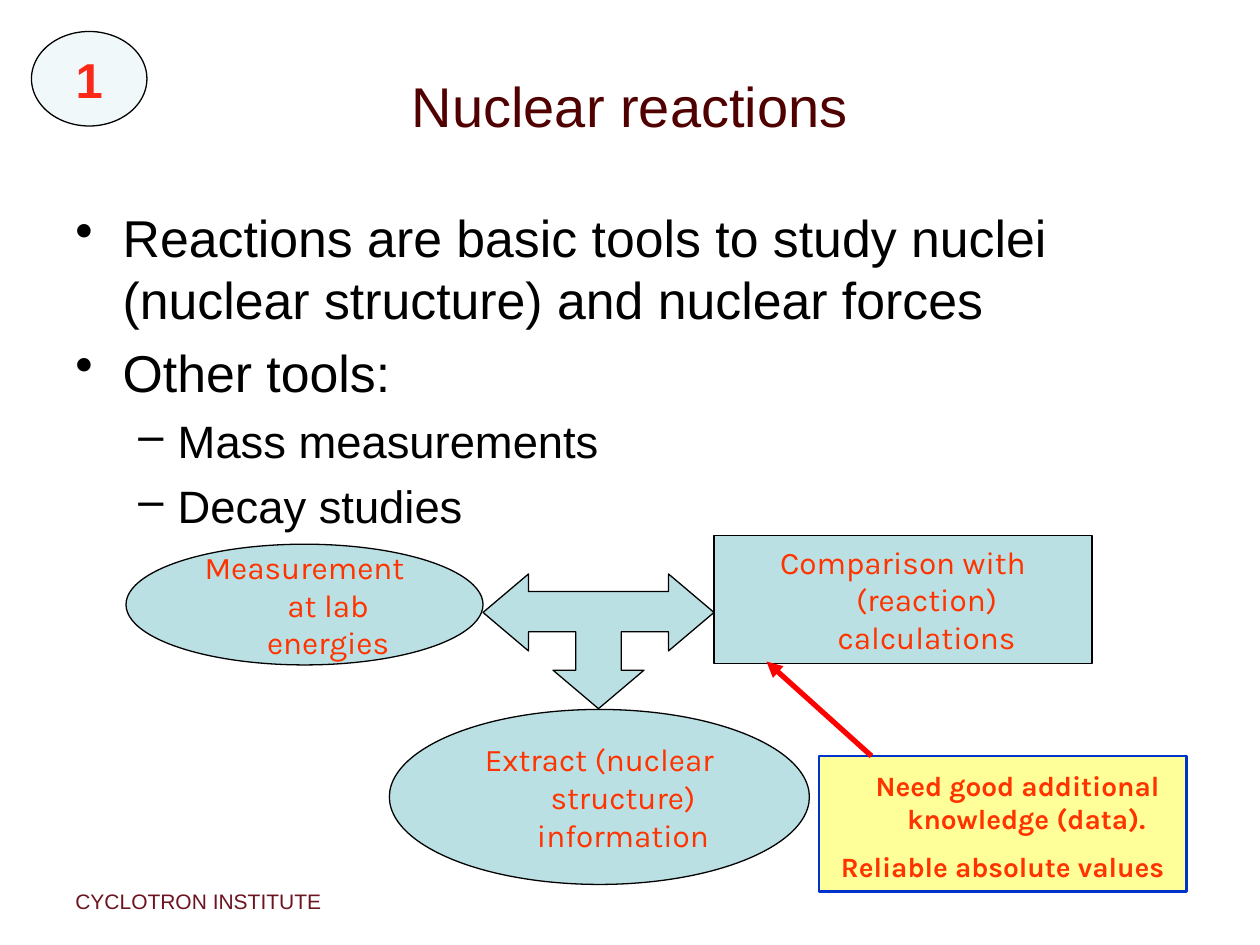
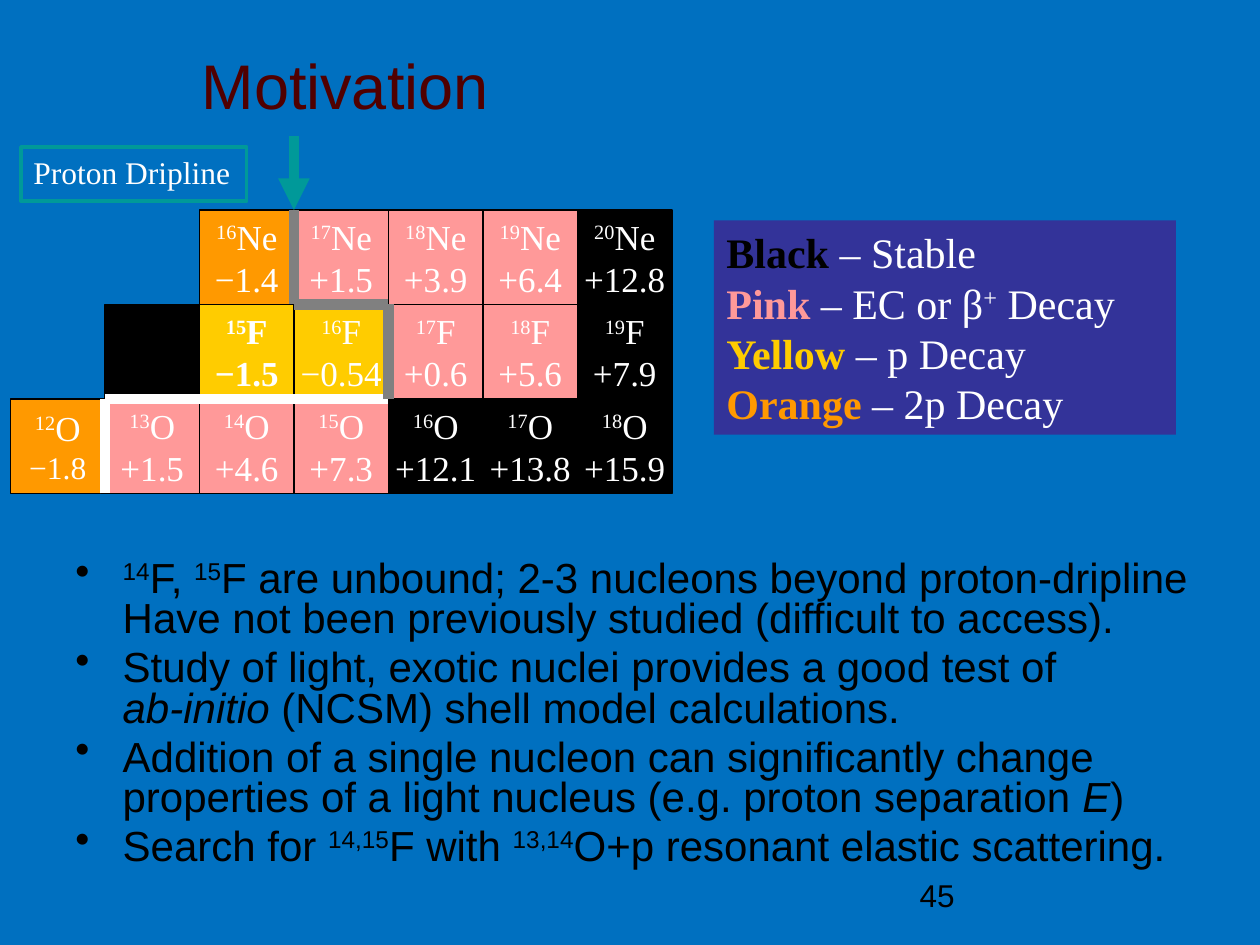
"""Builds two slides on nuclear reactions and the proton dripline."""
from dataclasses import dataclass

from lxml.etree import SubElement
from pptx import Presentation
from pptx.dml.color import RGBColor
from pptx.enum.shapes import MSO_CONNECTOR, MSO_SHAPE
from pptx.enum.text import MSO_ANCHOR, PP_ALIGN
from pptx.oxml.ns import qn
from pptx.util import Pt


@dataclass(frozen=True)
class Theme:
    sans: str = "Arial"
    serif: str = "Times New Roman"
    diagram: str = "Karla"
    black: str = "000000"
    white: str = "FFFFFF"
    title: str = "500000"
    footer: str = "6C1420"
    node: str = "BBE0E3"
    node_text: str = "FF3300"
    note: str = "FFFF99"
    note_line: str = "0033CC"
    red: str = "FF0000"
    badge: str = "F0F8F9"
    badge_text: str = "FC2818"
    blue: str = "0070C0"
    legend: str = "333399"
    teal: str = "009999"
    gray: str = "808080"
    pink: str = "FF9999"
    yellow: str = "FFCC00"
    orange: str = "FF9900"
    footer_size: float = 12
    note_size: float = 16
    label_size: float = 18
    cell_size: float = 20
    text_size: float = 24
    sub_size: float = 25.9
    badge_size: float = 28
    body_size: float = 29.6
    title_sizes: tuple = (32, 36)


theme = Theme()


def add_box(page, kind, frame, fill=None, line=None, weight=0.75):
    """Add a preset shape, or a text box when kind is None."""
    lengths = [Pt(length) for length in frame]
    if kind is None:
        box = page.shapes.add_textbox(*lengths)
    else:
        box = page.shapes.add_shape(kind, *lengths)
        box.shadow.inherit = False
        box.fill.solid()
        box.fill.fore_color.rgb = RGBColor.from_string(fill)
        if line:
            box.line.color.rgb = RGBColor.from_string(line)
            box.line.width = Pt(weight)
        else:
            box.line.fill.background()
    box.text_frame.word_wrap = True
    box.text_frame.vertical_anchor = MSO_ANCHOR.TOP
    return box


def write(box, lines, font, size, color, align=PP_ALIGN.LEFT):
    """Fill a box; runs part at | and open with ^ raised, / italic, ! bold."""
    text_frame = box.text_frame
    for index, line in enumerate(lines):
        para = text_frame.add_paragraph() if index else text_frame.paragraphs[0]
        para.alignment = align
        for part in line.split("|"):
            if part == "\n":
                para.add_line_break()
                continue
            span = para.add_run()
            span.text = part.lstrip("^/!")
            marks = part[:len(part) - len(span.text)]
            span.font.name = font
            span.font.size = Pt(size)
            span.font.color.rgb = RGBColor.from_string(color)
            span.font.bold = "!" in marks
            span.font.italic = "/" in marks
            if "^" in marks:
                span.font._element.set("baseline", "30000")
    return text_frame.paragraphs


deck = Presentation()
deck.slide_width, deck.slide_height = Pt(720), Pt(540)

pages = []
for name, frame, align, size, background in [
    ("Nuclear reactions", (36, 30, 648, 60), PP_ALIGN.CENTER, theme.title_sizes[0], theme.white),
    ("Motivation", (108, 22.5, 528, 51), PP_ALIGN.LEFT, theme.title_sizes[1], theme.blue),
]:
    page = deck.slides.add_slide(deck.slide_layouts[5])
    page.background.fill.solid()
    page.background.fill.fore_color.rgb = RGBColor.from_string(background)
    title = page.shapes.title
    title.left, title.top, title.width, title.height = [Pt(length) for length in frame]
    title.text_frame.vertical_anchor = MSO_ANCHOR.MIDDLE
    write(title, [name], theme.sans, size, theme.title, align)
    pages.append(page)
reactions, motivation = pages

for page, frame, text, size, color in [
    (reactions, (36, 504, 318, 22), "CYCLOTRON INSTITUTE", theme.footer_size, theme.footer),
    (motivation, (518.4, 496.8, 150, 36), "45", theme.label_size, theme.black),
]:
    write(add_box(page, None, frame), [text], theme.sans, size, color)

tools = [
    "Reactions are basic tools to study nuclei (nuclear structure) and nuclear forces",
    "Other tools:",
    "Mass measurements",
    "Decay studies",
]
motives = [
    "^14|F, |^15|F are unbound; 2-3 nucleons beyond proton-dripline "
    "Have not been previously studied (difficult to access).",
    "Study of light, exotic nuclei provides a good test of|\n|/ab-initio"
    "| (NCSM) shell model calculations.",
    "Addition of a single nucleon can significantly change properties of a light nucleus "
    "(e.g. proton separation |/E|)",
    "Search for |^14,15|F with |^13,14|O+p resonant elastic scattering.",
]
for page, frame, lines, size, first_sub, spacing, gap in [
    (reactions, (36, 108, 648, 174), tools, theme.body_size, 2, 1, 6),
    (motivation, (36, 312, 666, 198), motives, theme.text_size, 4, 0.8, 5),
]:
    body = add_box(page, None, frame)
    body.text_frame.margin_top = Pt(3.6 + gap)
    for index, para in enumerate(write(body, lines, theme.sans, size, theme.black)):
        is_sub = index >= first_sub
        properties = para._p.get_or_add_pPr()
        properties.set("marL", str(Pt(58.5 if is_sub else 27)))
        properties.set("indent", str(Pt(-22.5 if is_sub else -27)))
        SubElement(properties, qn("a:buChar"), char="–" if is_sub else "•")
        para.line_spacing = spacing
        if index:
            para.space_before = Pt(gap)
        if is_sub:
            for span in para.runs:
                span.font.size = Pt(theme.sub_size)

for kind, frame, text in [
    (MSO_SHAPE.OVAL, (72, 311, 204, 69), "Measurement at lab energies"),
    (MSO_SHAPE.FLOWCHART_PROCESS, (408, 306, 216, 73), "Comparison with (reaction) calculations"),
    (MSO_SHAPE.OVAL, (222.5, 405.4, 240, 100), "Extract (nuclear structure) information"),
]:
    node = add_box(reactions, kind, frame, theme.node, theme.black)
    node.text_frame.vertical_anchor = MSO_ANCHOR.MIDDLE
    para = write(node, [text], theme.diagram, theme.label_size, theme.node_text, PP_ALIGN.CENTER)[0]
    para._p.pPr.set("marL", str(Pt(27)))
    para._p.pPr.set("indent", str(Pt(-27)))

right_half = [(26.5, 383), (13.2, 383), (13.2, 360.7), (39.5, 360.7), (39.5, 372),
              (66, 350), (39.5, 327.6), (39.5, 338.4)]
left_half = [(-x, y) for x, y in reversed(right_half)]
center = 342
builder = reactions.shapes.build_freeform(center, 405.4, scale=Pt(1))
builder.add_line_segments([(center + x, y) for x, y in right_half + left_half], close=True)
three_way_arrow = builder.convert_to_shape()
three_way_arrow.shadow.inherit = False
three_way_arrow.fill.solid()
three_way_arrow.fill.fore_color.rgb = RGBColor.from_string(theme.node)
three_way_arrow.line.color.rgb = RGBColor.from_string(theme.black)
three_way_arrow.line.width = Pt(0.75)

note = add_box(reactions, MSO_SHAPE.RECTANGLE, (468, 432, 210, 77.5), theme.note, theme.note_line, 1.5)
note.text_frame.margin_top = Pt(7)
note_lines = ["!Need good additional knowledge (data).", "!Reliable absolute values"]
note_paras = write(note, note_lines, theme.diagram, theme.note_size, theme.node_text, PP_ALIGN.CENTER)
for para, indent in zip(note_paras, (-10, -27)):
    para._p.pPr.set("marL", str(Pt(27)))
    para._p.pPr.set("indent", str(Pt(indent)))
note_paras[1].space_before = Pt(8)

badge = add_box(reactions, MSO_SHAPE.OVAL, (18, 18, 66, 54), theme.badge, theme.black)
badge.text_frame.vertical_anchor = MSO_ANCHOR.MIDDLE
badge.text_frame.word_wrap = False
write(badge, ["!1"], theme.sans, theme.badge_size, theme.badge_text, PP_ALIGN.CENTER)

cell, grid_left, grid_top = 54, 6, 120
fills = {"K": theme.black, "P": theme.pink, "Y": theme.yellow, "O": theme.orange}
isotope_rows = [
    ("Ne", 16, 2, "OPPPK", ["−1.4", "+1.5", "+3.9", "+6.4", "+12.8"]),
    ("F", 14, 1, "KYYPPK", ["", "−1.5", "−0.54", "+0.6", "+5.6", "+7.9"]),
    ("O", 12, 0, "OPPPKKK", ["−1.8", "+1.5", "+4.6", "+7.3", "+12.1", "+13.8", "+15.9"]),
]
for row, (element, first_mass, first_column, codes, energies) in enumerate(isotope_rows):
    for step, (code, energy) in enumerate(zip(codes, energies)):
        frame = (grid_left + cell * (first_column + step), grid_top + cell * row, cell, cell)
        isotope = add_box(motivation, MSO_SHAPE.RECTANGLE, frame, fills[code], theme.black)
        if not energy:
            continue
        isotope.text_frame.word_wrap = False
        isotope.text_frame.vertical_anchor = MSO_ANCHOR.MIDDLE
        mass = first_mass + step
        bold = "!" if (element, mass) == ("F", 15) else ""
        lines = [f"{bold}^{mass}|{bold}{element}", f"{bold}{energy}"]
        paras = write(isotope, lines, theme.serif, theme.cell_size, theme.white, PP_ALIGN.CENTER)
        if (element, mass) == ("O", 12):
            paras[1].runs[0].font.size = Pt(theme.label_size)

dripline = add_box(motivation, MSO_SHAPE.RECTANGLE, (12, 84, 129, 31), theme.blue, theme.teal, 2)
dripline.text_frame.word_wrap = False
write(dripline, ["Proton Dripline"], theme.serif, theme.label_size, theme.white)

legend = add_box(motivation, MSO_SHAPE.RECTANGLE, (408, 126, 264, 122.4), theme.legend)
legend_lines = ["!Black| – Stable", "!Pink| – EC or β|^+| Decay", "!Yellow| – p Decay", "!Orange| – 2p Decay"]
legend_paras = write(legend, legend_lines, theme.serif, theme.text_size, theme.white)
for para, color in zip(legend_paras, fills.values()):
    para.runs[0].font.color.rgb = RGBColor.from_string(color)

for page, color, weight, has_head, points in [
    (reactions, theme.red, 3, True, [(498, 432), (438, 378)]),
    (motivation, theme.white, 6, False, [(60, 282), (60, 228), (114, 228), (168, 228), (222, 228)]),
    (motivation, theme.gray, 6, False, [(168, 120), (168, 174), (222, 174), (222, 228)]),
    (motivation, theme.teal, 6, True, [(168, 78), (168, 120)]),
]:
    for start, end in zip(points, points[1:]):
        ends = [Pt(length) for length in start + end]
        connector = page.shapes.add_connector(MSO_CONNECTOR.STRAIGHT, *ends)
        connector.line.color.rgb = RGBColor.from_string(color)
        connector.line.width = Pt(weight)
        if has_head:
            SubElement(connector.line._get_or_add_ln(), qn("a:tailEnd"), type="triangle")
        SubElement(connector._element.spPr, qn("a:effectLst"))

deck.save("out.pptx")
